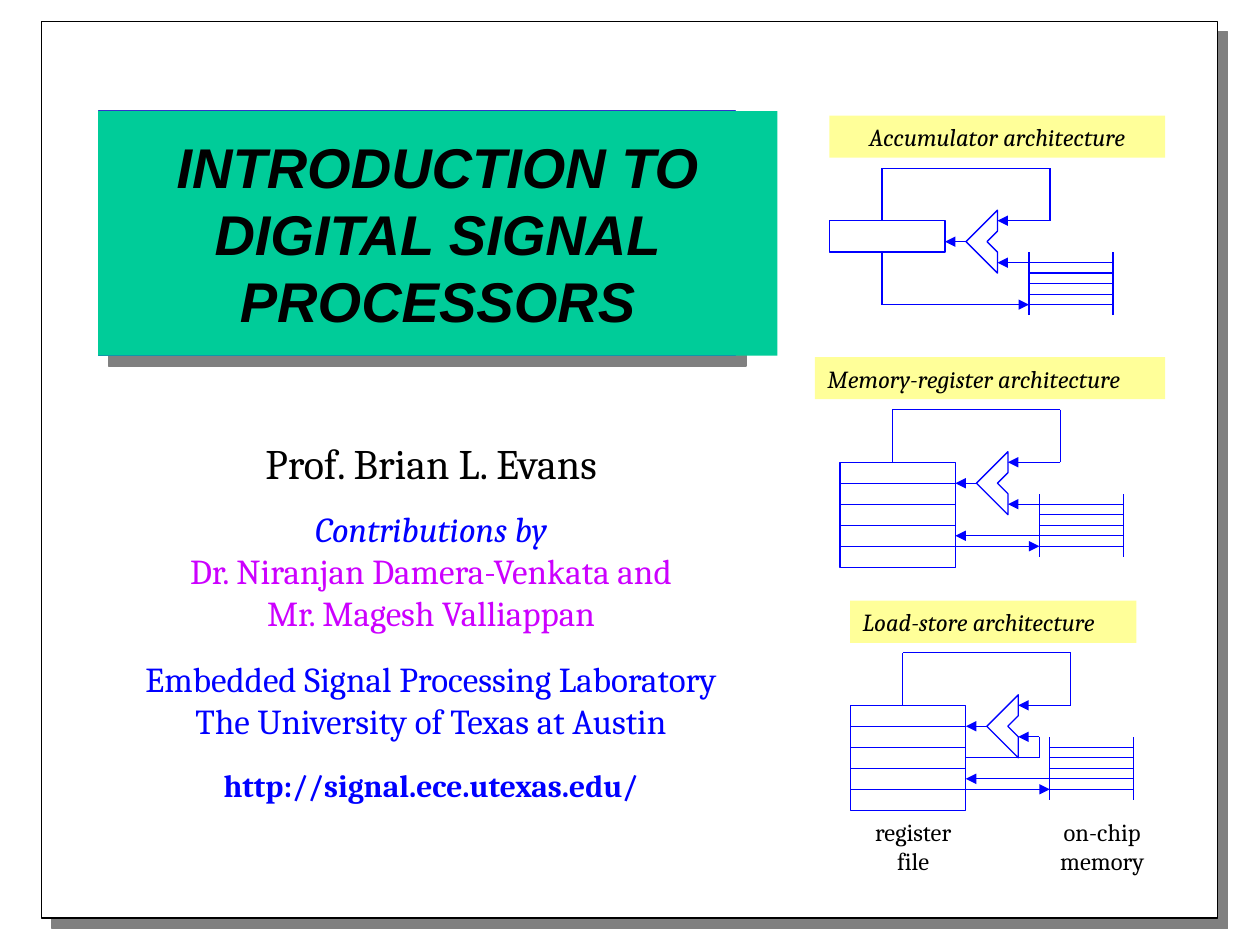
from itertools import pairwise
from lxml.etree import SubElement
from pptx import Presentation
from pptx.dml.color import RGBColor
from pptx.enum.shapes import MSO_CONNECTOR, MSO_SHAPE
from pptx.enum.text import MSO_ANCHOR, MSO_AUTO_SIZE, PP_ALIGN
from pptx.oxml.ns import qn
from pptx.util import Cm, Pt

THEME = {
    "black": "000000", "white": "FFFFFF", "shadow": "808080",
    "green": "00CC99", "edge": "3333CC", "blue": "0000FF",
    "violet": "CC00FF", "yellow": "FFFF99",
    "head": "Arial", "body": "Cambria",
    "title": 32, "author": 24, "text": 20, "url": 18, "label": 14, "line": 0.75,
}

TITLE = "INTRODUCTION TO\vDIGITAL SIGNAL\vPROCESSORS"
CREDITS = [
    {"size": "author", "after": 0.3, "lines": [("Prof. Brian L. Evans", "black")]},
    {"size": "text", "after": 0.5, "lines": [
        ("Contributions by", "blue"),
        ("Dr. Niranjan Damera-Venkata and", "violet"),
        ("Mr. Magesh Valliappan", "violet")]},
    {"size": "text", "after": 0.5, "lines": [
        ("Embedded Signal Processing Laboratory", "blue"),
        ("The University of Texas at Austin", "blue")]},
    {"size": "url", "after": 0, "lines": [("http://signal.ece.utexas.edu/", "blue")]},
]
ITALIC_LINE = "Contributions by"

# Diagram coordinates count grid steps from the start of the feedback wire.
STEP = 2.54 / 12
REG_LEFT, REG_TOP, REG_RIGHT = -5, 5, 6
MEM_LEFT, MEM_RIGHT, MEM_TOP, MEM_BOTTOM = 14, 22, 8, 14
ALU = [(8, 7), (11, 4), (11, 6), (10, 7), (11, 8), (11, 10)]
FEEDBACK = [(0, 5), (0, 0), (16, 0), (16, 5), (11, 5)]
RESULT = [(8, 7), (6, 7)]
OPERAND = [(14, 9), (11, 9)]
LOAD = [(14, 12), (6, 12)]
STORE = [(6, 13), (14, 13)]
DIAGRAMS = [
    {"label": "Accumulator architecture", "box": (16.72, 2.33, 6.77, 0.85),
     "align": PP_ALIGN.CENTER, "origin": (17.78, 3.39), "reg_height": 3,
     "wires": [OPERAND, [(0, 8), (0, 13), (14, 13)]]},
    {"label": "Memory-register architecture", "box": (16.43, 7.2, 7.06, 0.85),
     "align": PP_ALIGN.LEFT, "origin": (17.99, 8.26), "reg_height": 10,
     "wires": [OPERAND, LOAD, STORE]},
    {"label": "Load-store architecture", "box": (17.14, 12.11, 5.77, 0.85),
     "align": PP_ALIGN.LEFT, "origin": (18.2, 13.16), "reg_height": 10,
     "wires": [[(6, 10), (13, 10), (13, 8), (11, 8)], LOAD, STORE]},
]
CAPTIONS = [("register file", (17.14, 16.34, 2.54, 1.45)),
            ("on-chip memory", (20.53, 16.34, 3.38, 1.45))]


def rgb(name):
    return RGBColor.from_string(THEME[name])


def style_run(r, size, color="black", font="body", bold=False, italic=False):
    f = r.font
    f.name, f.size, f.bold, f.italic = THEME[font], Pt(THEME[size]), bold, italic
    f.color.rgb = rgb(color)


def place(sp, box):
    sp.left, sp.top, sp.width, sp.height = map(Cm, box)


def set_line(line, color):
    line.color.rgb = rgb(color)
    line.width = Pt(THEME["line"])


def add_box(s, box, fill, line=None):
    sp = s.shapes.add_shape(MSO_SHAPE.RECTANGLE, *map(Cm, box))
    sp.shadow.inherit = False
    sp.fill.solid()
    sp.fill.fore_color.rgb = rgb(fill)
    if line:
        set_line(sp.line, line)
    else:
        sp.line.fill.background()
    return sp


def add_panel(s, box, fill, line):
    sp = add_box(s, box, fill, line)
    effects = sp._element.spPr.find(qn("a:effectLst"))
    shadow = SubElement(effects, qn("a:outerShdw"), dist=str(Pt(8.5)),
                        dir="2700000", algn="ctr", rotWithShape="0")
    SubElement(shadow, qn("a:srgbClr"), val=THEME["shadow"])


def write_label(sp, text, align, italic=False):
    tf = sp.text_frame
    tf.word_wrap = True
    p = tf.paragraphs[0]
    p.text = text
    p.alignment = align
    style_run(p.runs[0], "label", italic=italic)


def add_wire(s, points, arrow=False):
    wires = []
    for start, end in pairwise(points):
        c = s.shapes.add_connector(MSO_CONNECTOR.STRAIGHT, *map(Cm, start + end))
        set_line(c.line, "blue")
        SubElement(c._element.spPr, qn("a:effectLst"))
        wires.append(c)
    if arrow:
        SubElement(wires[-1].line._get_or_add_ln(), qn("a:tailEnd"), type="triangle")
    return wires


def add_diagram(s, d):
    def at(point):
        return tuple(o + v * STEP for o, v in zip(d["origin"], point))

    label = add_box(s, d["box"], "yellow")
    label.text_frame.vertical_anchor = MSO_ANCHOR.MIDDLE
    write_label(label, d["label"], d["align"], italic=True)

    size = ((REG_RIGHT - REG_LEFT) * STEP, d["reg_height"] * STEP)
    register = add_box(s, at((REG_LEFT, REG_TOP)) + size, "white", "blue")
    bottom = REG_TOP + d["reg_height"]
    rules = [[(REG_LEFT, y), (REG_RIGHT, y)] for y in range(REG_TOP + 2, bottom, 2)
             if d["reg_height"] > 3]
    rules += [[(x, MEM_BOTTOM), (x, MEM_TOP)] for x in (MEM_LEFT, MEM_RIGHT)]
    rules += [[(MEM_LEFT, y), (MEM_RIGHT, y)] for y in range(MEM_TOP + 1, MEM_BOTTOM)]
    for rule in rules:
        add_wire(s, [at(pt) for pt in rule])

    corners = [tuple(map(Cm, at(pt))) for pt in ALU]
    fb = s.shapes.build_freeform(*corners[0])
    fb.add_line_segments(corners[1:], close=True)
    alu = fb.convert_to_shape()
    alu.shadow.inherit = False
    alu.fill.background()
    set_line(alu.line, "blue")

    for points in [FEEDBACK, RESULT] + d["wires"]:
        wires = add_wire(s, [at(pt) for pt in points], arrow=True)
        if points[0] == (REG_RIGHT, (REG_TOP + bottom) / 2):
            wires[0].begin_connect(register, 3)


def fill_title(sp):
    place(sp, (1.98, 2.24, 13.69, 4.93))
    sp.fill.solid()
    sp.fill.fore_color.rgb = rgb("green")
    tf = sp.text_frame
    tf.auto_size = MSO_AUTO_SIZE.NONE
    tf.vertical_anchor = MSO_ANCHOR.MIDDLE
    p = tf.paragraphs[0]
    p.text = TITLE
    p.alignment = PP_ALIGN.CENTER
    for r in p.runs:
        style_run(r, "title", font="head", bold=True, italic=True)


def fill_credits(sp):
    place(sp, (1.07, 8.69, 15.24, 9.09))
    tf = sp.text_frame
    tf.auto_size = MSO_AUTO_SIZE.NONE
    for i, block in enumerate(CREDITS):
        p = tf.add_paragraph() if i else tf.paragraphs[0]
        size = THEME[block["size"]]
        p.text = "\v".join(text for text, _ in block["lines"])
        p.alignment = PP_ALIGN.CENTER
        p.space_before, p.space_after = Pt(size * 0.2), Pt(size * block["after"])
        for r, (text, color) in zip(p.runs, block["lines"]):
            style_run(r, block["size"], color, bold=block["size"] == "url",
                      italic=text == ITALIC_LINE)


def main():
    prs = Presentation()
    prs.slide_width, prs.slide_height = Cm(25.4), Cm(19.05)
    s = prs.slides.add_slide(prs.slide_layouts[0])
    title, credits = s.placeholders
    add_panel(s, (0.84, 0.43, 23.7, 18.08), "white", "black")
    add_panel(s, (1.98, 2.24, 12.85, 4.93), "green", "edge")
    for sp in (title, credits):
        s.shapes._spTree.append(sp._element)
    fill_title(title)
    fill_credits(credits)
    for d in DIAGRAMS:
        add_diagram(s, d)
    for text, box in CAPTIONS:
        write_label(s.shapes.add_textbox(*map(Cm, box)), text, PP_ALIGN.CENTER)
    prs.save("out.pptx")


if __name__ == "__main__":
    main()
